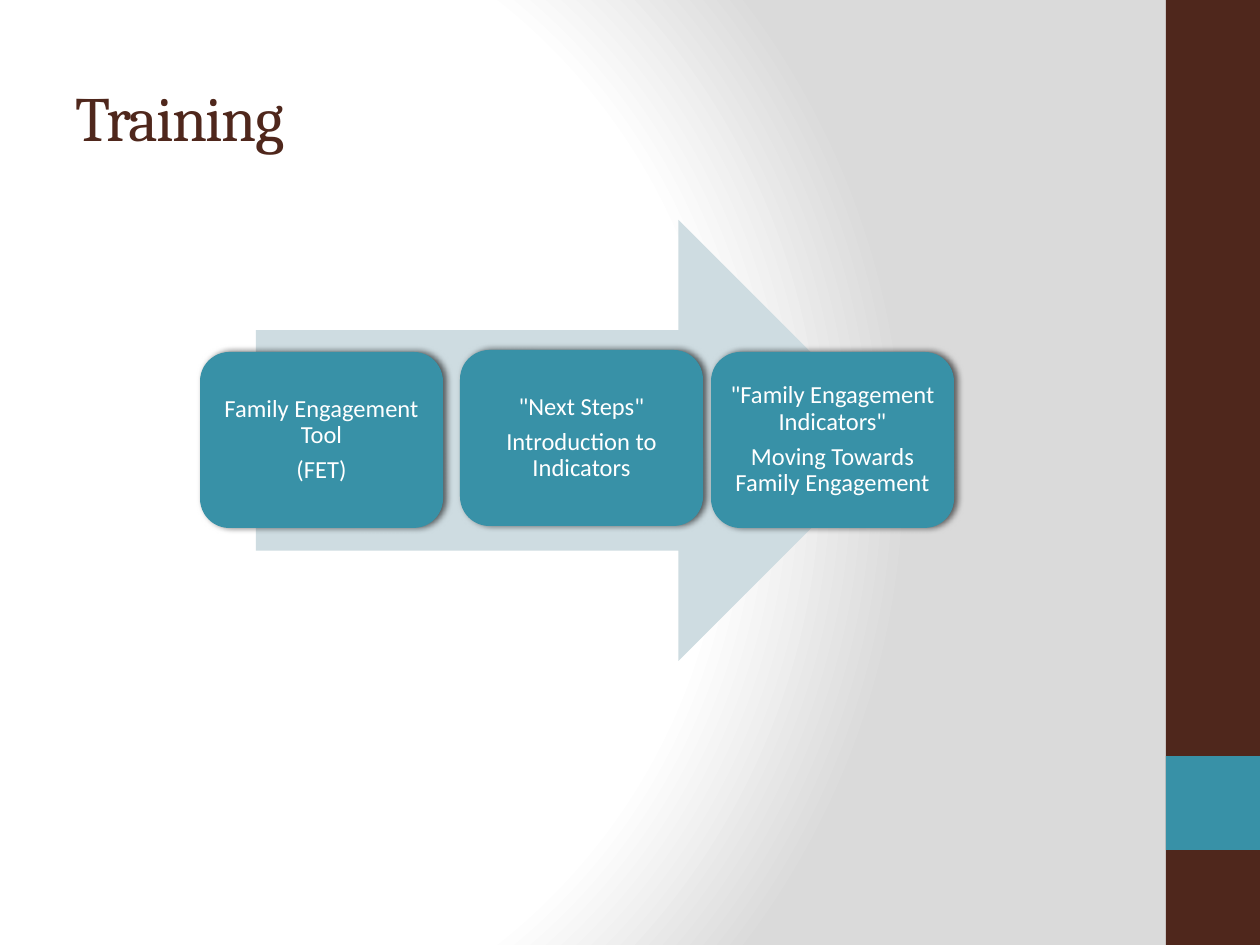
from pptx import Presentation
from pptx.dml.color import RGBColor
from pptx.enum.shapes import MSO_SHAPE
from pptx.enum.text import MSO_ANCHOR, PP_ALIGN
from pptx.oxml import parse_xml
from pptx.oxml.ns import nsdecls
from pptx.util import Pt

EMU_PER_PX = 914400 / 126
BROWN, TEAL, PALE_BLUE, WHITE = "4F271C", "3891A7", "CEDCE1", "FFFFFF"
STEP_WIDTH, STEP_HEIGHT = 243, 176
STEPS = [
    (200, 352, ["Family Engagement Tool", "(FET)"]),
    (460, 350, ['"Next Steps"', "Introduction to Indicators"]),
    (711, 352, ['"Family Engagement Indicators"', "Moving Towards Family Engagement"]),
]


def px(length):
    return round(length * EMU_PER_PX)


def color(hex_value):
    return RGBColor.from_string(hex_value)


def set_background(slide):
    slide.background.fill.solid()
    properties = slide.background.fill._xPr
    properties.replace(properties[0], parse_xml(
        f'<a:gradFill {nsdecls("a")} rotWithShape="1"><a:gsLst>'
        '<a:gs pos="0"><a:srgbClr val="FFFFFF"/></a:gs>'
        '<a:gs pos="75000"><a:srgbClr val="FFFFFF"/></a:gs>'
        '<a:gs pos="100000"><a:srgbClr val="DADADA"/></a:gs></a:gsLst>'
        '<a:path path="circle"><a:fillToRect l="20000" t="50000" r="100000" b="50000"/></a:path>'
        '</a:gradFill>'))


def add_block(slide, kind, left, top, width, height, fill):
    shape = slide.shapes.add_shape(kind, px(left), px(top), px(width), px(height))
    shape.shadow.inherit = False
    shape.fill.solid()
    shape.fill.fore_color.rgb = color(fill)
    shape.line.fill.background()
    return shape


def write_text(shape, lines, size, font, fill, align=PP_ALIGN.LEFT,
               line_spacing=None, space_after=None, tracking=None):
    frame = shape.text_frame
    frame.word_wrap = True
    frame.vertical_anchor = MSO_ANCHOR.MIDDLE
    for index, line in enumerate(lines):
        paragraph = frame.add_paragraph() if index else frame.paragraphs[0]
        paragraph.alignment = align
        paragraph.line_spacing = line_spacing
        paragraph.space_after = space_after
        run = paragraph.add_run()
        run.text = line
        run.font.size = Pt(size)
        run.font.name = font
        run.font.color.rgb = color(fill)
        if tracking is not None:
            run.font._element.set("spc", str(tracking * 100))


def add_shadow(shape):
    effects = shape._element.spPr.find("{*}effectLst")
    effects.append(parse_xml(
        f'<a:outerShdw {nsdecls("a")} blurRad="{Pt(4)}" dist="{Pt(2)}" dir="0" rotWithShape="0">'
        '<a:srgbClr val="000000"><a:alpha val="60000"/></a:srgbClr></a:outerShdw>'))


def add_title(slide, text):
    title = slide.shapes.title
    title.left, title.top, title.width, title.height = map(px, (63, 38, 1050, 157))
    write_text(title, [text], 36, "Cambria", BROWN, tracking=-1)


def add_step(slide, left, top, lines):
    step = add_block(slide, MSO_SHAPE.ROUNDED_RECTANGLE, left, top, STEP_WIDTH, STEP_HEIGHT, TEAL)
    add_shadow(step)
    frame = step.text_frame
    frame.margin_left = frame.margin_right = frame.margin_top = frame.margin_bottom = px(8)
    write_text(step, lines, 14, "Calibri", WHITE, align=PP_ALIGN.CENTER,
               line_spacing=0.9, space_after=Pt(5))


def main():
    presentation = Presentation()
    presentation.slide_width, presentation.slide_height = px(1260), px(945)
    slide = presentation.slides.add_slide(presentation.slide_layouts[5])
    set_background(slide)
    add_block(slide, MSO_SHAPE.RECTANGLE, 1166, 0, 94, 945, BROWN)
    add_block(slide, MSO_SHAPE.RECTANGLE, 1166, 756, 94, 94, TEAL)
    add_title(slide, "Training")
    add_block(slide, MSO_SHAPE.RIGHT_ARROW, 256, 220, 643, 441, PALE_BLUE)
    for left, top, lines in STEPS:
        add_step(slide, left, top, lines)
    presentation.save("out.pptx")


if __name__ == "__main__":
    main()
